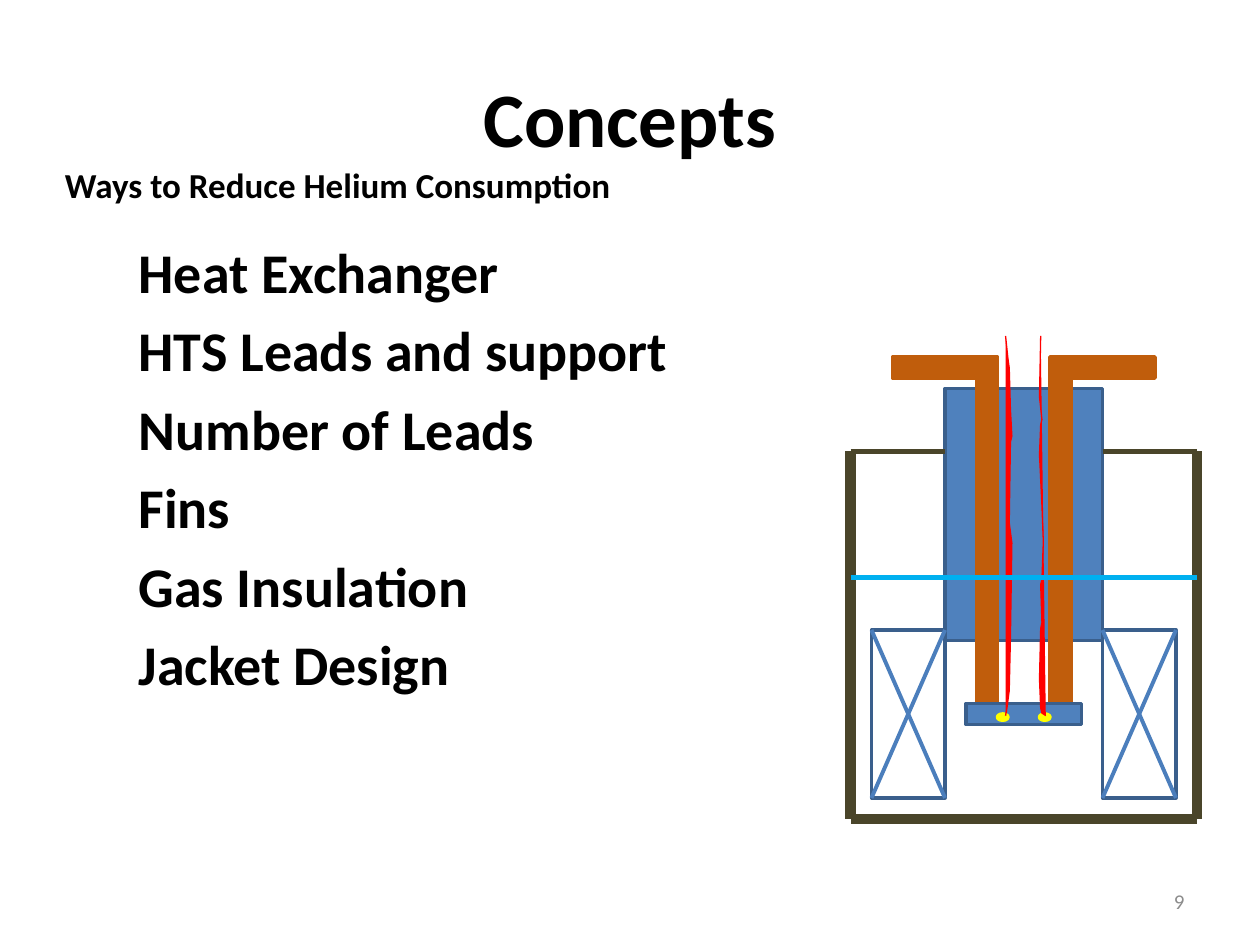
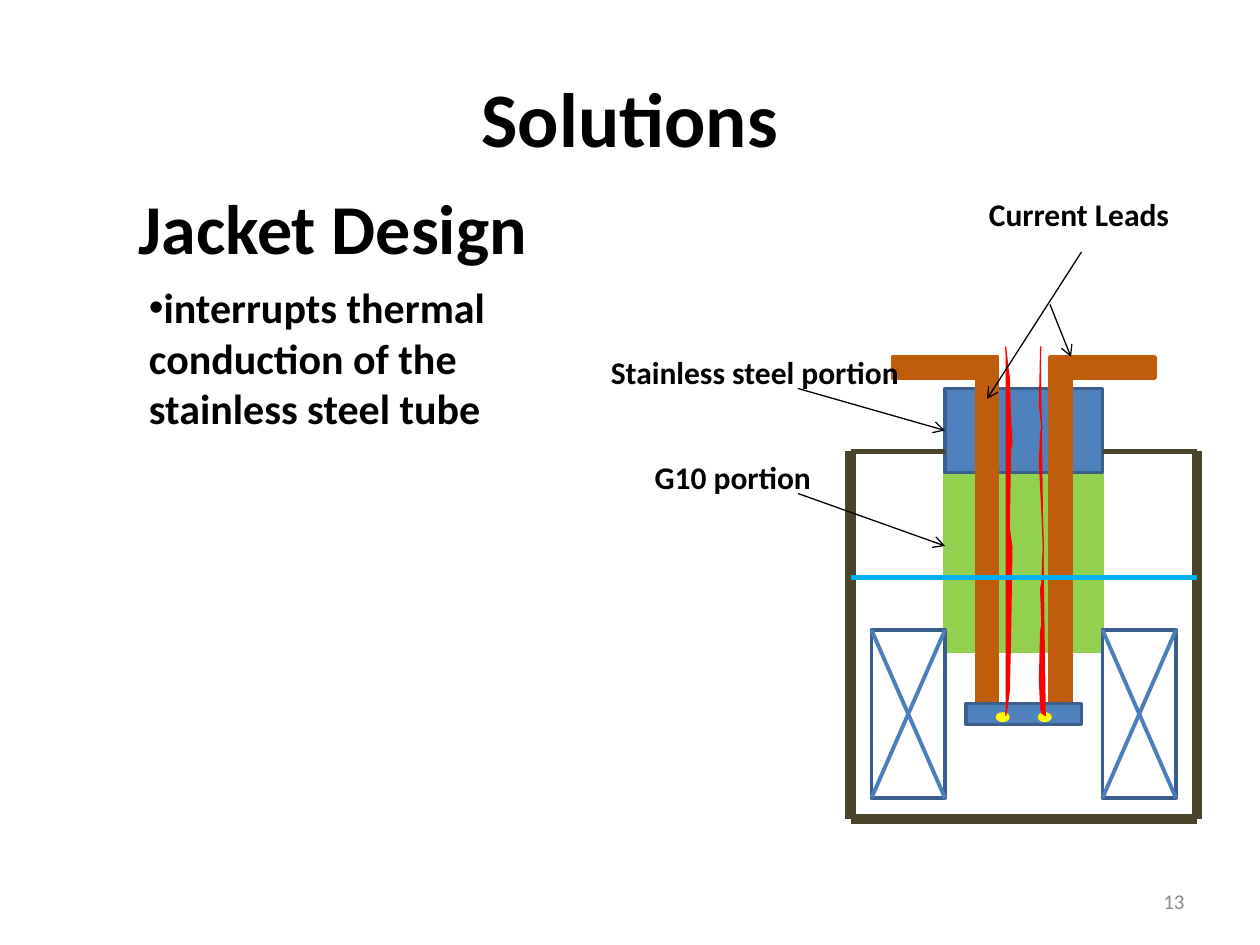
from dataclasses import dataclass

from lxml import etree
from pptx import Presentation
from pptx.dml.color import RGBColor
from pptx.enum.shapes import MSO_CONNECTOR, MSO_SHAPE
from pptx.enum.text import MSO_ANCHOR, PP_ALIGN
from pptx.oxml.ns import qn
from pptx.util import Pt

RECTANGLE = MSO_SHAPE.RECTANGLE
OVAL = MSO_SHAPE.OVAL
STRAIGHT = MSO_CONNECTOR.STRAIGHT
MIDDLE = MSO_ANCHOR.MIDDLE
RIGHT = PP_ALIGN.RIGHT
TITLE_AND_CONTENT = 1


@dataclass(frozen=True)
class Theme:
    font: str = "Calibri"
    text: str = "000000"
    page_number: str = "8C8C8C"
    steel: str = "4F81BD"
    steel_edge: str = "3A5F8C"
    g10: str = "92D050"
    copper: str = "C05D0C"
    contact: str = "FFFF00"
    wire: str = "FF0000"
    coil: str = "FFFFFF"
    coil_cross: str = "4B7EBC"
    vessel: str = "4A452A"
    helium: str = "00B0F0"
    title_size: int = 44
    heading_size: int = 40
    list_size: int = 32
    detail_size: int = 24
    subtitle_size: int = 20
    label_size: int = 18
    number_size: int = 12


THEME = Theme()

# Cryostat geometry, in points
CENTER = 585
TUBE_HALF = 45
VESSEL_HALF = 99
RIM_TOP, FLOOR = 258, 468
HELIUM_LEVEL = 330
COIL_TOP, COIL_WIDTH, COIL_HEIGHT = 360, 42, 96
WIRE_BOTTOM, WIRE_TOP = 409, 192
LEFT_WIRE = [
    (574.6, 409), (575.3, 405.4), (576.7, 394.6), (577.4, 364.3),
    (578.2, 310.3), (576.7, 298.8), (577.4, 252.7), (578.2, 249.1),
    (577.4, 234), (576.7, 210.2), (576, 205.2), (574.6, 192),
]
RIGHT_WIRE = [
    (597.6, 409), (595.4, 407.5), (594.7, 404.6), (594, 388.1),
    (594.7, 359.3), (595.4, 355.7), (594.7, 334.1), (595.4, 331.2),
    (596.2, 309.6), (595.4, 288.7), (594, 259.9), (594.7, 242.6),
    (595.4, 239.8), (594, 226.8), (594.7, 192),
]


def points(*lengths):
    return [Pt(length) for length in lengths]


def place(shape, left, top, width, height):
    shape.left, shape.top, shape.width, shape.height = points(left, top, width, height)


def format_text(paragraph, size, color=THEME.text, bold=True):
    for run in paragraph.runs:
        run.font.name = THEME.font
        run.font.size = Pt(size)
        run.font.bold = bold
        run.font.color.rgb = RGBColor.from_string(color)


def set_bullet(paragraph, hanging=0, character=None):
    properties = paragraph._p.get_or_add_pPr()
    properties.set("marL", str(Pt(hanging)))
    properties.set("indent", str(Pt(-hanging)))
    if character:
        etree.SubElement(properties, qn("a:buFont")).set("typeface", "Arial")
        etree.SubElement(properties, qn("a:buChar")).set("char", character)
    else:
        etree.SubElement(properties, qn("a:buNone"))


def add_text(slide, text, box, size, wrap=True, color=THEME.text, bold=True):
    frame = slide.shapes.add_textbox(*points(*box)).text_frame
    frame.word_wrap = wrap
    frame.text = text
    format_text(frame.paragraphs[0], size, color, bold)
    return frame


def paint(shape, fill, edge, width):
    shape.shadow.inherit = False
    shape.fill.solid()
    shape.fill.fore_color.rgb = RGBColor.from_string(fill)
    shape.line.color.rgb = RGBColor.from_string(edge)
    shape.line.width = Pt(width)


def add_block(slide, box, fill, edge=None, kind=RECTANGLE):
    block = slide.shapes.add_shape(kind, *points(*box))
    paint(block, fill, edge or fill, 2)


def add_mirrored_blocks(slide, inner, top, width, height, fill, edge=None, kind=RECTANGLE):
    """Draw two blocks whose inner edges lie equally far from the tube's axis."""
    for left in (CENTER - inner - width, CENTER + inner):
        add_block(slide, (left, top, width, height), fill, edge, kind)


def add_line(slide, start, end, color, width, arrow=False):
    line = slide.shapes.add_connector(STRAIGHT, *points(*start, *end))
    line.line.color.rgb = RGBColor.from_string(color)
    line.line.width = Pt(width)
    if arrow:
        etree.SubElement(line.line._get_or_add_ln(), qn("a:tailEnd")).set("type", "arrow")
    etree.SubElement(line._element.spPr, qn("a:effectLst"))


def add_wire(slide, outline, top):
    """Draw a wire, stretched upward from its fixed lower end to the given top."""
    stretch = (WIRE_BOTTOM - top) / (WIRE_BOTTOM - WIRE_TOP)
    start, *rest = [
        points(x, WIRE_BOTTOM - (WIRE_BOTTOM - y) * stretch) for x, y in outline
    ]
    builder = slide.shapes.build_freeform(*start)
    builder.add_line_segments(rest, close=False)
    paint(builder.convert_to_shape(), THEME.wire, THEME.wire, 0.75)


def add_coils(slide):
    add_mirrored_blocks(slide, TUBE_HALF, COIL_TOP, COIL_WIDTH, COIL_HEIGHT,
                        THEME.coil, THEME.steel_edge)
    bottom = COIL_TOP + COIL_HEIGHT
    for left in (CENTER - TUBE_HALF - COIL_WIDTH, CENTER + TUBE_HALF):
        right = left + COIL_WIDTH
        add_line(slide, (left, COIL_TOP), (right, bottom), THEME.coil_cross, 2.25)
        add_line(slide, (left, bottom), (right, COIL_TOP), THEME.coil_cross, 2.25)


def add_vessel(slide):
    left, right = CENTER - VESSEL_HALF, CENTER + VESSEL_HALF
    for wall in (left, right):
        add_line(slide, (wall, RIM_TOP), (wall, FLOOR), THEME.vessel, 6)
    add_line(slide, (left, FLOOR), (right, FLOOR), THEME.vessel, 6)
    add_line(slide, (left, HELIUM_LEVEL), (right, HELIUM_LEVEL), THEME.helium, 3)
    for start, end in ((left, CENTER - TUBE_HALF), (CENTER + TUBE_HALF, right)):
        add_line(slide, (start, RIM_TOP), (end, RIM_TOP), THEME.vessel, 3)


def add_cryostat(slide, tube_sections, wire_top):
    """Draw the cryostat; each tube section is (top, height, fill, edge)."""
    for top, height, fill, edge in tube_sections:
        add_block(slide, (CENTER - TUBE_HALF, top, 2 * TUBE_HALF, height), fill, edge)
    add_mirrored_blocks(slide, 15, 216, 12, 186, THEME.copper)
    add_mirrored_blocks(slide, 15, 204, 60, 12, THEME.copper)
    add_block(slide, (CENTER - 33, 402, 66, 12), THEME.steel, THEME.steel_edge)
    add_mirrored_blocks(slide, 9, 408, 6, 3.6, THEME.contact, kind=OVAL)
    for outline in (LEFT_WIRE, RIGHT_WIRE):
        add_wire(slide, outline, wire_top)
    add_coils(slide)
    add_vessel(slide)


def add_content_slide(presentation, title, items, list_top, list_size, number):
    slide = presentation.slides.add_slide(presentation.slide_layouts[TITLE_AND_CONTENT])
    heading, body = slide.placeholders
    place(heading, 36, 21.6, 648, 90)
    heading.text_frame.text = title
    format_text(heading.text_frame.paragraphs[0], THEME.title_size)
    place(body, 72, list_top, 648, 356.4)
    body.text_frame.text = "\n".join(items)
    for paragraph in body.text_frame.paragraphs:
        set_bullet(paragraph, hanging=27)
        format_text(paragraph, list_size)
    footer = add_text(slide, number, (516, 500.4, 168, 28.8), THEME.number_size,
                      color=THEME.page_number, bold=False)
    footer.vertical_anchor = MIDDLE
    footer.paragraphs[0].alignment = RIGHT
    return slide


def add_concepts(presentation):
    ideas = ["Heat Exchanger", "HTS Leads and support", "Number of Leads",
             "Fins", "Gas Insulation", "Jacket Design"]
    slide = add_content_slide(presentation, "Concepts", ideas, 132, THEME.list_size, "9")
    add_text(slide, "Ways to Reduce Helium Consumption", (30, 90, 486, 31.5),
             THEME.subtitle_size)
    add_cryostat(slide, [(222, 144, THEME.steel, THEME.steel_edge)], WIRE_TOP)


def add_solutions(presentation):
    slide = add_content_slide(presentation, "Solutions", ["Jacket Design"], 102,
                              THEME.heading_size, "13")
    detail = add_text(slide, "interrupts thermal conduction of the stainless steel tube",
                      (78, 157.5, 270, 116.6), THEME.detail_size)
    set_bullet(detail.paragraphs[0], character="•")
    add_cryostat(slide, [(270, 102, THEME.g10, THEME.g10),
                         (222, 48, THEME.steel, THEME.steel_edge)], wire_top=198)
    labels = [("Current Leads", 558, 108, 121),
              ("Stainless steel portion", 342, 198, 180),
              ("G10 portion", 367, 258, 107)]
    for text, left, top, width in labels:
        add_text(slide, text, (left, top, width, 29), THEME.label_size, wrap=False)
    pointers = [((618, 144), (564, 228)), ((600, 174), (612, 204)),
                ((456, 222), (540, 246)), ((456, 282), (540, 312))]
    for start, end in pointers:
        add_line(slide, start, end, THEME.text, 0.75, arrow=True)


def main():
    presentation = Presentation()
    presentation.slide_width, presentation.slide_height = points(720, 540)
    add_concepts(presentation)
    add_solutions(presentation)
    presentation.save("out.pptx")


if __name__ == "__main__":
    main()
